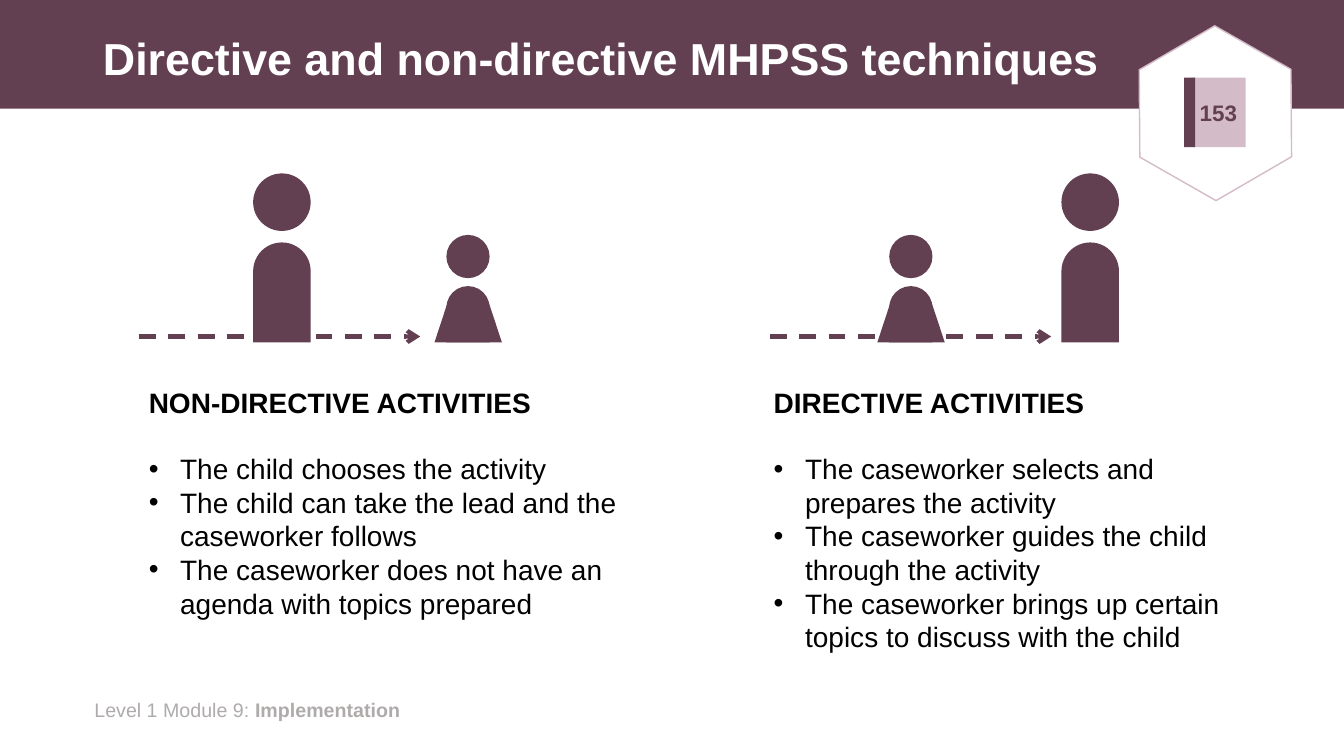
from dataclasses import dataclass
from lxml import etree
from pptx import Presentation
from pptx import util as u
from pptx.dml.color import RGBColor
from pptx.enum import dml, shapes, text
from pptx.oxml import ns


@dataclass(frozen=True)
class Theme:
    font: str = "Arial"
    plum: str = "633F52"
    pink: str = "D4BBC8"
    white: str = "FFFFFF"
    black: str = "000000"
    grey: str = "AFABAB"
    title: int = 32
    body: int = 20
    page: int = 16
    footer: int = 14


T = Theme()
MSO = shapes.MSO_SHAPE


def write(p, words, size=T.body, color=T.black, bold=False, align=text.PP_ALIGN.LEFT):
    p.alignment = align
    r = p.add_run()
    r.text = words
    r.font.name = T.font
    r.font.size = u.Pt(size)
    r.font.bold = bold
    r.font.color.rgb = RGBColor.from_string(color)


def draw(parent, kind, x, y, w, h, fill=T.plum, line=None, adj=()):
    sp = parent.shapes.add_shape(kind, u.Cm(x), u.Cm(y), u.Cm(w), u.Cm(h))
    sp.shadow.inherit = False
    sp.fill.solid()
    sp.fill.fore_color.rgb = RGBColor.from_string(fill)
    if line:
        sp.line.color.rgb = RGBColor.from_string(line)
        sp.line.width = u.Pt(1)
    else:
        sp.line.fill.background()
    for i, value in enumerate(adj):
        sp.adjustments[i] = value
    return sp


prs = Presentation()
prs.slide_width, prs.slide_height = u.Cm(33.87), u.Cm(19.05)
s = prs.slides.add_slide(prs.slide_layouts[5])

band = draw(s, MSO.RECTANGLE, 0, 0, 33.87, 2.74)
title = s.shapes.title
title.element.addprevious(band.element)
title.left, title.top, title.width, title.height = u.Cm(2.34), u.Cm(0.33), u.Cm(29.21), u.Cm(2.41)
tf = title.text_frame
tf.auto_size = text.MSO_AUTO_SIZE.NONE
tf.vertical_anchor = text.MSO_ANCHOR.MIDDLE
tf.paragraphs[0].line_spacing = 0.9
write(tf.paragraphs[0], "Directive and non-directive MHPSS techniques", size=T.title, color=T.white, bold=True)

footer = s.shapes.add_textbox(u.Cm(2.13), u.Cm(17.45), u.Cm(11.56), u.Cm(0.86))
footer.text_frame.word_wrap = True
p = footer.text_frame.paragraphs[0]
write(p, "Level 1 Module 9: ", size=T.footer, color=T.grey)
write(p, "Implementation", size=T.footer, color=T.grey, bold=True)

columns = [
    (3.5, 9.6, "NON-DIRECTIVE ACTIVITIES", [
        "The child chooses the activity",
        "The child can take the lead and the caseworker follows",
        "The caseworker does not have an agenda with topics prepared",
    ]),
    (19.25, 10.72, "DIRECTIVE ACTIVITIES", [
        "The caseworker selects and prepares the activity",
        "The caseworker guides the child through the activity",
        "The caseworker brings up certain topics to discuss with the child",
    ]),
]
for x, y, heading, points in columns:
    tb = s.shapes.add_textbox(u.Cm(x), u.Cm(9.6), u.Cm(12.67), u.Cm(6.25))
    tf = tb.text_frame
    tf.word_wrap = True
    write(tf.paragraphs[0], heading, bold=True)
    tf.paragraphs[0].space_after = u.Pt(23)
    for point in points:
        p = tf.add_paragraph()
        write(p, point)
        pPr = p._p.get_or_add_pPr()
        pPr.set("marL", str(u.Cm(0.79)))
        pPr.set("indent", str(u.Cm(-0.79)))
        etree.SubElement(pPr, ns.qn("a:buFont")).set("typeface", T.font)
        etree.SubElement(pPr, ns.qn("a:buChar")).set("char", "•")

ground = 8.63
for child_x, adult_x, arrow_x in [(10.95, 6.38, 3.5), (22.11, 26.75, 19.4)]:
    child = s.shapes.add_group_shape()
    draw(child, MSO.ROUND_2_SAME_RECTANGLE, child_x + 0.3, ground - 1.42, 1.09, 1.42, adj=(0.5, 0))
    draw(child, MSO.OVAL, child_x + 0.3, ground - 2.71, 1.09, 1.09)
    draw(child, MSO.TRAPEZOID, child_x, ground - 0.99, 1.7, 0.99, adj=(0.33,))
    adult = s.shapes.add_group_shape()
    draw(adult, MSO.OVAL, adult_x, ground - 4.26, 1.45, 1.45)
    draw(adult, MSO.ROUND_2_SAME_RECTANGLE, adult_x, ground - 2.52, 1.45, 2.52, adj=(0.5, 0))
    arrow = s.shapes.add_connector(
        shapes.MSO_CONNECTOR.STRAIGHT, u.Cm(arrow_x), u.Cm(8.48), u.Cm(arrow_x + 7.09), u.Cm(8.48))
    arrow.line.color.rgb = RGBColor.from_string(T.plum)
    arrow.line.width = u.Pt(3)
    arrow.line.dash_style = dml.MSO_LINE.DASH
    etree.SubElement(arrow.line._get_or_add_ln(), ns.qn("a:tailEnd")).set("type", "arrow")
    etree.SubElement(arrow.element.spPr, ns.qn("a:effectLst"))

badge = s.shapes.add_group_shape()
hexagon = draw(badge, MSO.HEXAGON, 28.42, 0.95, 4.42, 3.81, fill=T.white, line=T.pink, adj=(0.29,))
hexagon.rotation = 29.7
page = draw(badge, MSO.RECTANGLE, 30.02, 1.96, 1.37, 1.75, fill=T.pink)
tf = page.text_frame
tf.word_wrap = False
tf.vertical_anchor = text.MSO_ANCHOR.MIDDLE
write(tf.paragraphs[0], "153", size=T.page, color=T.plum, bold=True, align=text.PP_ALIGN.CENTER)
draw(badge, MSO.RECTANGLE, 29.84, 1.96, 0.28, 1.75)

prs.save("out.pptx")
